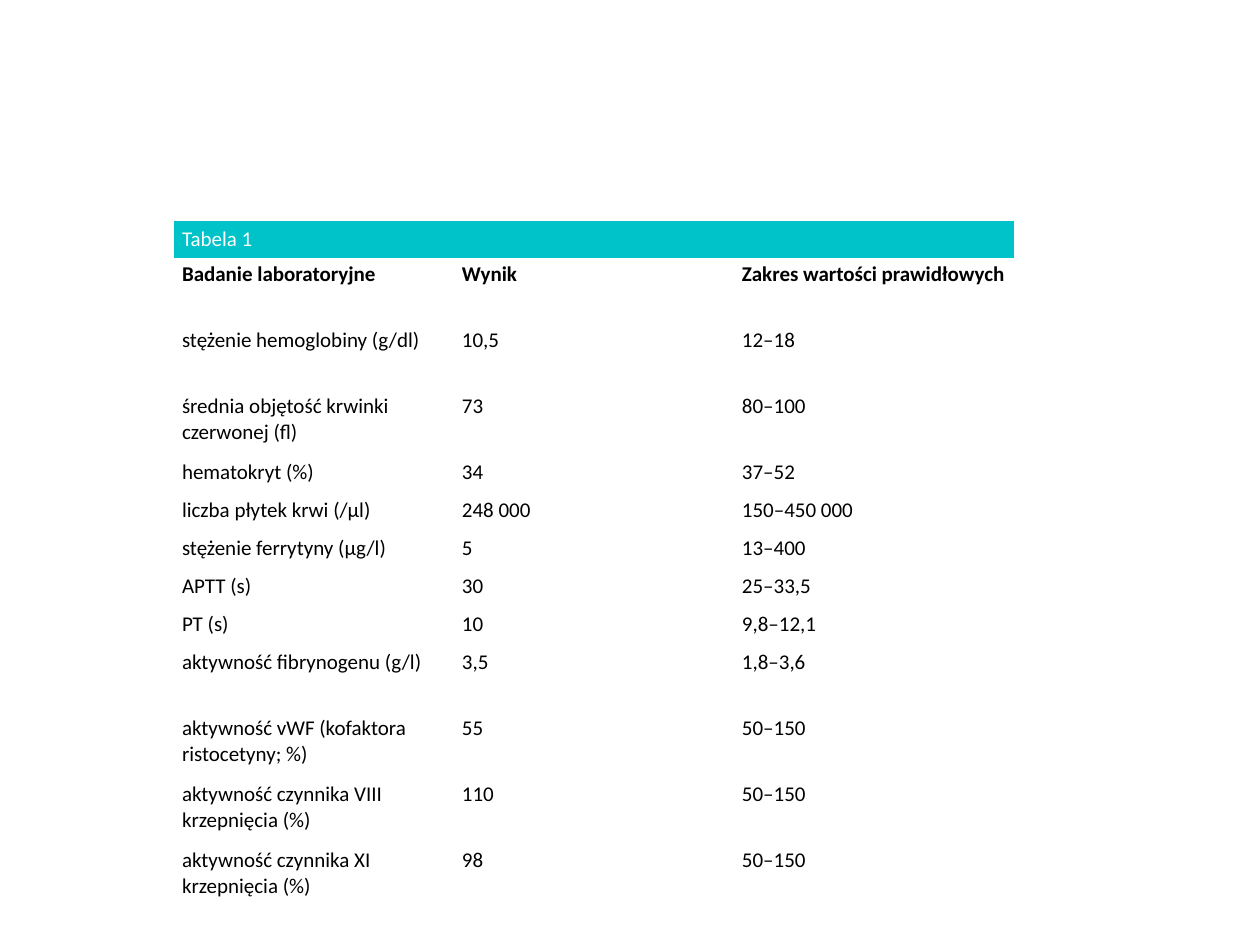
from pptx import Presentation
from pptx import util as u
from pptx.dml import color
from pptx.enum import text as t
from pptx.oxml import ns

SCALE = 914400 / 126
FONT = "Calibri"
NO_STYLE = "{2D5ABB26-0587-4C30-8999-92F81FD0307C}"
TITLE = "Tabela 1"
LEFT, TOP, COLUMN_WIDTH = 174, 221, 280
TITLE_HEIGHT, SHORT, TALL = 37, 38, 66
ROWS = [
    (TALL, "Badanie laboratoryjne", "Wynik", "Zakres wartości prawidłowych"),
    (TALL, "stężenie hemoglobiny (g/dl)", "10,5", "12–18"),
    (TALL, "średnia objętość krwinki czerwonej (fl)", "73", "80–100"),
    (SHORT, "hematokryt (%)", "34", "37–52"),
    (SHORT, "liczba płytek krwi (/µl)", "248 000", "150–450 000"),
    (SHORT, "stężenie ferrytyny (µg/l)", "5", "13–400"),
    (SHORT, "APTT (s)", "30", "25–33,5"),
    (SHORT, "PT (s)", "10", "9,8–12,1"),
    (TALL, "aktywność fibrynogenu (g/l)", "3,5", "1,8–3,6"),
    (TALL, "aktywność vWF (kofaktora ristocetyny; %)", "55", "50–150"),
    (TALL, "aktywność czynnika VIII krzepnięcia (%)", "110", "50–150"),
    (TALL, "aktywność czynnika XI krzepnięcia (%)", "98", "50–150"),
]


def px(value):
    return u.Emu(round(value * SCALE))


def rgb(value):
    return color.RGBColor.from_string(value)


def write(frame, wording, size=12, ink="000000", bold=False):
    span = frame.paragraphs[0].add_run()
    span.text = wording
    span.font.name = FONT
    span.font.size = u.Pt(size)
    span.font.bold = bold
    span.font.color.rgb = rgb(ink)


def format_cell(cell, fill="FFFFFF", anchor=t.MSO_ANCHOR.TOP):
    cell.fill.solid()
    cell.fill.fore_color.rgb = rgb(fill)
    cell.vertical_anchor = anchor
    cell.margin_left = cell.margin_right = px(8)
    cell.margin_top = cell.margin_bottom = px(4)


def add_results_table(page):
    heights = [TITLE_HEIGHT] + [height for height, *_ in ROWS]
    frame = page.shapes.add_table(len(heights), 3, px(LEFT), px(TOP),
                                  px(3 * COLUMN_WIDTH), px(sum(heights)))
    table = frame.table
    table.first_row = table.horz_banding = False
    frame._element.find(".//" + ns.qn("a:tableStyleId")).text = NO_STYLE
    for column in table.columns:
        column.width = px(COLUMN_WIDTH)
    for row, height in zip(table.rows, heights):
        row.height = px(height)
    return table


def fill_results_table(table):
    heading = table.cell(0, 0)
    heading.merge(table.cell(0, 2))
    format_cell(heading, fill="00C2C9", anchor=t.MSO_ANCHOR.MIDDLE)
    write(heading.text_frame, TITLE, ink="FFFFFF")
    for row, (_, *values) in enumerate(ROWS, 1):
        for column, value in enumerate(values):
            cell = table.cell(row, column)
            format_cell(cell)
            write(cell.text_frame, value, bold=row == 1)


def main():
    deck = Presentation()
    deck.slide_width, deck.slide_height = px(1260), px(945)
    page = deck.slides.add_slide(deck.slide_layouts[6])
    fill_results_table(add_results_table(page))
    deck.save("out.pptx")


if __name__ == "__main__":
    main()
